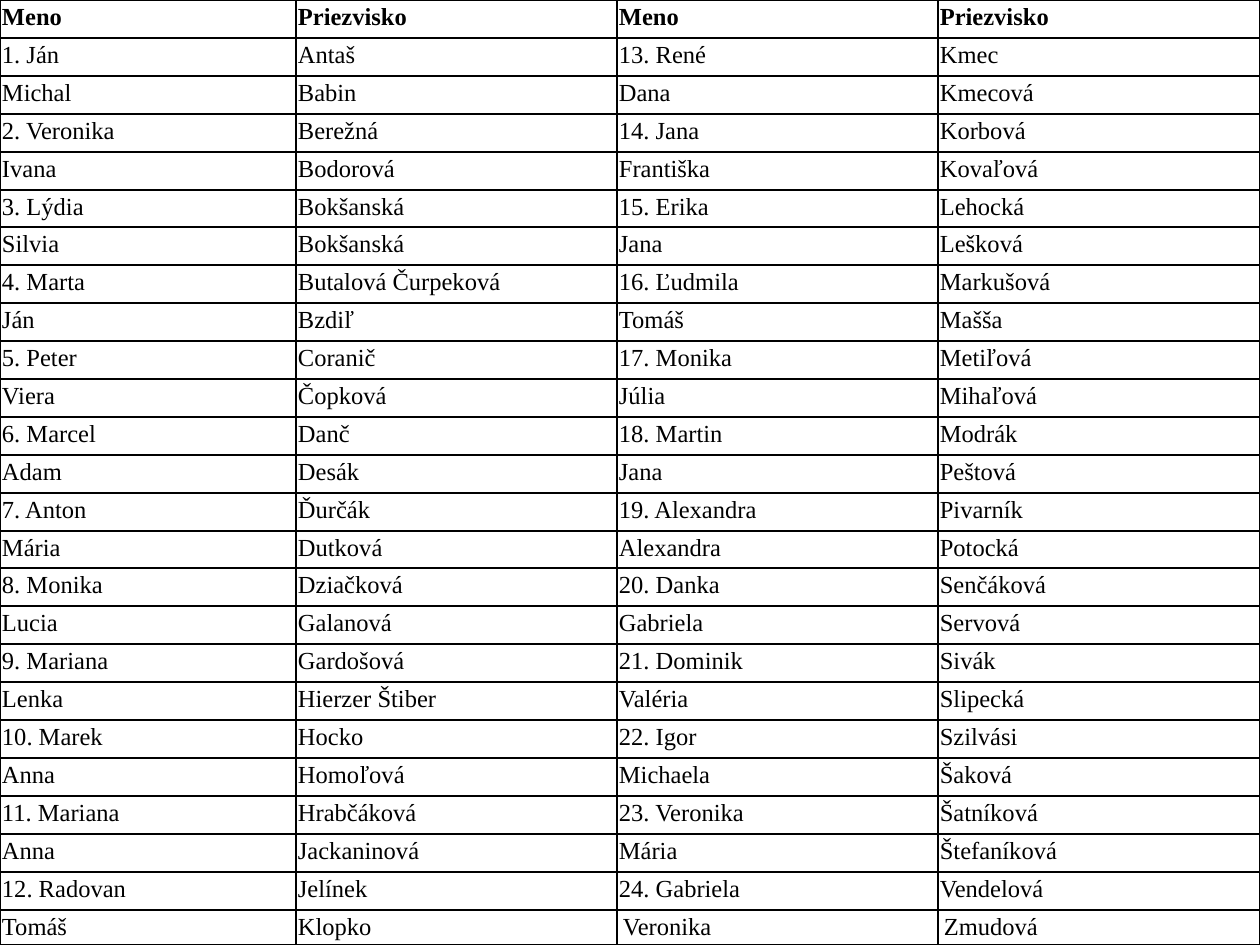
from lxml import etree
from pptx import Presentation, util as u
from pptx.dml.color import RGBColor
from pptx.oxml import ns

PX = 914400 // 126
WIDE, HIGH = 1260, 945
COLS = (296, 321, 321, 322)
STEP = 37.9
FONT = "Times New Roman"
PLAIN = "{2D5ABB26-0587-4C30-8999-92F81FD0307C}"
HUES = {"ink": "000000", "paper": "FFFFFF"}
HEAD = ("Meno", "Priezvisko") * 2
HALF = 12
NAMES = [
    ("Ján", "Antaš", "René", "Kmec"),
    ("Michal", "Babin", "Dana", "Kmecová"),
    ("Veronika", "Berežná", "Jana", "Korbová"),
    ("Ivana", "Bodorová", "Františka", "Kovaľová"),
    ("Lýdia", "Bokšanská", "Erika", "Lehocká"),
    ("Silvia", "Bokšanská", "Jana", "Lešková"),
    ("Marta", "Butalová Čurpeková", "Ľudmila", "Markušová"),
    ("Ján", "Bzdiľ", "Tomáš", "Mašša"),
    ("Peter", "Coranič", "Monika", "Metiľová"),
    ("Viera", "Čopková", "Júlia", "Mihaľová"),
    ("Marcel", "Danč", "Martin", "Modrák"),
    ("Adam", "Desák", "Jana", "Peštová"),
    ("Anton", "Ďurčák", "Alexandra", "Pivarník"),
    ("Mária", "Dutková", "Alexandra", "Potocká"),
    ("Monika", "Dziačková", "Danka", "Senčáková"),
    ("Lucia", "Galanová", "Gabriela", "Servová"),
    ("Mariana", "Gardošová", "Dominik", "Sivák"),
    ("Lenka", "Hierzer Štiber", "Valéria", "Slipecká"),
    ("Marek", "Hocko", "Igor", "Szilvási"),
    ("Anna", "Homoľová", "Michaela", "Šaková"),
    ("Mariana", "Hrabčáková", "Veronika", "Šatníková"),
    ("Anna", "Jackaninová", "Mária", "Štefaníková"),
    ("Radovan", "Jelínek", "Gabriela", "Vendelová"),
    ("Tomáš", "Klopko", "Veronika", "Zmudová"),
]


def px(num):
    """Turn pixels into EMU."""
    return u.Emu(num * PX)


def apply(obj, vals):
    """Set each attribute named in vals."""
    for key, val in vals.items():
        setattr(obj, key, val)


def edge(cell, sides):
    """Draw a one-point line on the given sides, in the order L, R, T, B."""
    props = cell._tc.get_or_add_tcPr()
    for side in sides:
        line = etree.SubElement(props, ns.qn(f"a:ln{side}"), w=str(u.Pt(1)))
        fill = etree.SubElement(line, ns.qn("a:solidFill"))
        etree.SubElement(fill, ns.qn("a:srgbClr"), val=HUES["ink"])


def write(cell, words, bold, inset):
    """Put formatted text in a cell."""
    apply(cell, {"margin_left": px(inset), "margin_right": px(inset),
                 "margin_top": 0, "margin_bottom": 0})
    para = cell.text_frame.paragraphs[0]
    apply(para, {"line_spacing": 1.15, "space_before": u.Pt(10)})
    run = para.add_run()
    run.text = words
    apply(run.font, {"name": FONT, "size": u.Pt(14), "bold": bold})
    run.font.color.rgb = RGBColor.from_string(HUES["ink"])


def label(row, col, name):
    """Number the first name of each pair."""
    if row % 2 or col % 2:
        return name
    return f"{row // 2 + 1 + col // 2 * HALF}. {name}"


def grid(slide):
    """Add the empty name table, sized to fill the slide."""
    rows = len(NAMES) + 1
    table = slide.shapes.add_table(
        rows, len(COLS), 0, 0, px(WIDE), px(HIGH)).table
    apply(table, {"first_row": False, "horz_banding": False})
    table._tbl.tblPr.find(ns.qn("a:tableStyleId")).text = PLAIN
    for col, wide in zip(table.columns, COLS):
        col.width = px(wide)
    tops = [round(n * STEP) for n in range(rows)] + [HIGH]
    for row, top, end in zip(table.rows, tops, tops[1:]):
        row.height = px(end - top)
    return table


def fill(table):
    """Write the header and the paired names."""
    for col, words in enumerate(HEAD):
        cell = table.cell(0, col)
        write(cell, words, True, 2)
        edge(cell, "LRTB")
        cell.fill.background()
    last = len(NAMES) - 1
    for row, names in enumerate(NAMES):
        for col, name in enumerate(names):
            cell = table.cell(row + 1, col)
            inset = 6 if row == last and col > 1 else 2
            write(cell, label(row, col, name), False, inset)
            edge(cell, "LRB" if row % 2 else "LRT")
            cell.fill.solid()
            cell.fill.fore_color.rgb = RGBColor.from_string(HUES["paper"])


def main():
    """Build and save the slide."""
    deck = Presentation()
    apply(deck, {"slide_width": px(WIDE), "slide_height": px(HIGH)})
    slide = deck.slides.add_slide(deck.slide_layouts[6])
    fill(grid(slide))
    deck.save("out.pptx")


if __name__ == "__main__":
    main()
